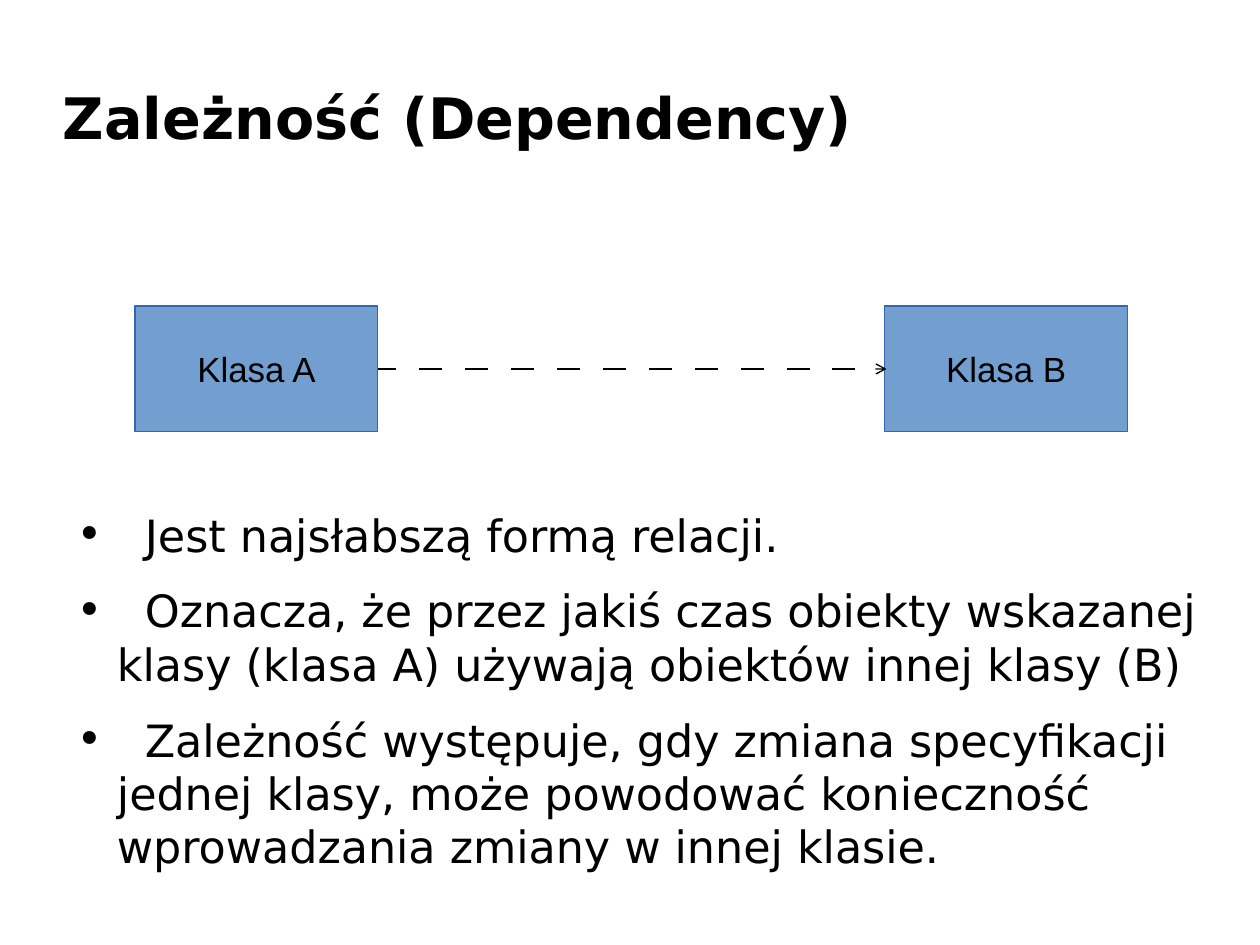
from lxml.etree import SubElement
from pptx import Presentation
from pptx.dml.color import RGBColor
from pptx.enum.shapes import MSO_CONNECTOR, MSO_SHAPE
from pptx.enum.text import MSO_ANCHOR, PP_ALIGN
from pptx.oxml.ns import qn
from pptx.util import Cm, Pt


def color(code):
    return RGBColor.from_string(code)


def add(parent, tag, **attrs):
    """Append a child element with the given attributes."""
    item = SubElement(parent, qn(tag))
    for key, value in attrs.items():
        item.set(key, str(value))
    return item


class Deck:
    ink, fill, edge = "000000", "729FCF", "3465AF"
    sans, label = "DejaVu Sans", "Arial"

    def __init__(self, width, height):
        self.prs = Presentation()
        self.prs.slide_width, self.prs.slide_height = Cm(width), Cm(height)
        self.slide = self.prs.slides.add_slide(self.prs.slide_layouts[6])

    def style(self, para, name, size, bold=False):
        font = para.font
        font.name, font.size, font.bold = name, Pt(size), bold
        font.color.rgb = color(self.ink)

    def frame(self, left, top, width, height):
        box = self.slide.shapes.add_textbox(Cm(left), Cm(top), Cm(width), Cm(height))
        text = box.text_frame
        text.word_wrap = True
        text.margin_left = text.margin_right = 0
        text.margin_top = text.margin_bottom = 0
        return text

    def title(self, words, *place):
        text = self.frame(*place)
        text.vertical_anchor = MSO_ANCHOR.MIDDLE
        text.text = words
        self.style(text.paragraphs[0], self.sans, 36, True)

    def bullets(self, lines, *place):
        text = self.frame(*place)
        margin, shift = 1.2, 0.62
        for i, line in enumerate(lines):
            para = text.paragraphs[0] if i == 0 else text.add_paragraph()
            para.text = "\t" + line
            para.space_after = Pt(14.2)
            props = para._p.get_or_add_pPr()
            props.set("marL", str(Cm(margin)))
            props.set("indent", str(-Cm(0.9)))
            add(props, "a:buFont", typeface=self.sans)
            add(props, "a:buChar", char="•")
            # Stops measured from the indent and from the box edge
            tabs = add(props, "a:tabLst")
            for stop in (shift, margin + shift):
                add(tabs, "a:tab", pos=Cm(stop), algn="l")
            self.style(para, self.sans, 28)

    def box(self, words, left, top, width, height):
        shape = self.slide.shapes.add_shape(
            MSO_SHAPE.RECTANGLE, Cm(left), Cm(top), Cm(width), Cm(height))
        shape.shadow.inherit = False
        shape.fill.solid()
        shape.fill.fore_color.rgb = color(self.fill)
        shape.line.color.rgb = color(self.edge)
        shape.line.width = Pt(0)
        text = shape.text_frame
        text.word_wrap = False
        text.vertical_anchor = MSO_ANCHOR.MIDDLE
        text.text = words
        para = text.paragraphs[0]
        para.alignment = PP_ALIGN.CENTER
        self.style(para, self.label, 22)

    def arrow(self, start, end, level):
        link = self.slide.shapes.add_connector(
            MSO_CONNECTOR.STRAIGHT, Cm(start), Cm(level), Cm(end), Cm(level))
        link.line.color.rgb = color(self.ink)
        link.line.width = Pt(0.85)
        line = link.line._ln
        dash = add(line, "a:custDash")
        add(dash, "a:ds", d=1700000, sp=1700000)
        add(line, "a:tailEnd", type="arrow")
        add(link._element.spPr, "a:effectLst")


def main():
    deck = Deck(28, 21)

    # Heading
    deck.title("Zależność (Dependency)", 1.4, 1.6, 20, 2)

    # Explanation
    deck.bullets([
        "Jest najsłabszą formą relacji.",
        "Oznacza, że przez jakiś czas obiekty wskazanej klasy (klasa A) "
        "używają obiektów innej klasy (B)",
        "Zależność występuje, gdy zmiana specyfikacji jednej klasy, "
        "może powodować konieczność wprowadzania zmiany w innej klasie.",
    ], 1.4, 11.28, 25.3, 7.72)

    # Class diagram
    top, width, height = 6.8, 5.4, 2.8
    deck.box("Klasa B", 19.66, top, width, height)
    deck.arrow(8.3, 19.7, top + height / 2)
    deck.box("Klasa A", 3, top, width, height)

    deck.prs.save("out.pptx")


if __name__ == "__main__":
    main()
